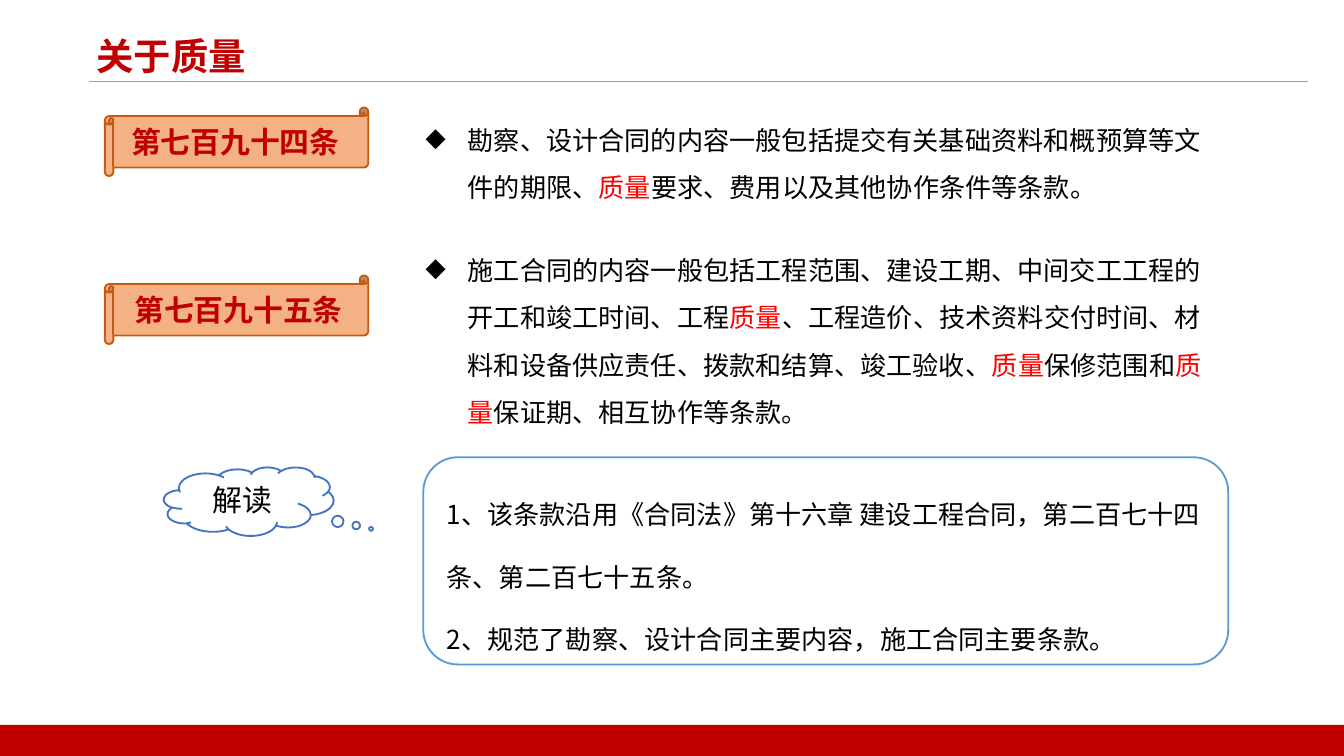
from lxml.etree import SubElement
from pptx import Presentation
from pptx.dml.color import RGBColor
from pptx.enum.shapes import MSO_CONNECTOR, MSO_SHAPE
from pptx.enum.text import MSO_ANCHOR, MSO_AUTO_SIZE, PP_ALIGN
from pptx.oxml.ns import qn
from pptx.util import Pt

FONT = "Noto Sans CJK SC"
WHITE = RGBColor(0xFF, 0xFF, 0xFF)
BLACK = RGBColor(0, 0, 0)
GRAY = RGBColor(0xA0, 0xA0, 0xA0)
CRIMSON = RGBColor(0xC0, 0, 0)
RED = RGBColor(0xFF, 0, 0)
PEACH = RGBColor(0xF4, 0xB1, 0x83)
RUST = RGBColor(0xC5, 0x5A, 0x11)
BLUE = RGBColor(0x44, 0x72, 0xC4)
LIGHT_BLUE = RGBColor(0x5B, 0x9B, 0xD5)

TITLE = "关于质量"
KEYWORD = "质量"
# label, label top, clause text, clause top, clause height
ARTICLES = [
    ("第七百九十四条 ", 57.6,
     "勘察、设计合同的内容一般包括提交有关基础资料和概预算等文件的期限、质量要求、费用以及其他协作条件等条款。",
     54.7, 54),
    ("第七百九十五条", 147.6,
     "施工合同的内容一般包括工程范围、建设工期、中间交工工程的开工和竣工时间、工程质量、工程造价、技术资料交付时间、"
     "材料和设备供应责任、拨款和结算、竣工验收、质量保修范围和质量保证期、相互协作等条款。",
     124.6, 105.1),
]
NOTE_LABEL = "解读"
NOTES = [
    "1、该条款沿用《合同法》第十六章 建设工程合同，第二百七十四条、第二百七十五条。",
    "2、规范了勘察、设计合同主要内容，施工合同主要条款。",
]

HEADING = {"size": Pt(20), "bold": True}
LABEL = {"size": Pt(16), "bold": True}
CLOUD = {"size": Pt(16)}
BODY = {"size": Pt(14)}


def add_run(paragraph, text, style, color):
    run = paragraph.add_run()
    run.text = text
    for name, value in style.items():
        setattr(run.font, name, value)
    run.font.name = FONT
    run.font.color.rgb = color
    east_asian = SubElement(run.font._element, qn("a:ea"))
    east_asian.set("typeface", FONT)


def add_bullet(paragraph, character, indent):
    properties = paragraph._p.get_or_add_pPr()
    properties.set("marL", str(indent))
    properties.set("indent", str(-indent))
    SubElement(properties, qn("a:buChar")).set("char", character)


def add_box(slide, kind, box, fill=None, line=None):
    shape = slide.shapes.add_shape(kind, *map(Pt, box))
    shape.shadow.inherit = False
    if fill is None:
        shape.fill.background()
    else:
        shape.fill.solid()
        shape.fill.fore_color.rgb = fill
    if line is None:
        shape.line.fill.background()
    else:
        shape.line.color.rgb = line
        shape.line.width = Pt(1)
    shape.text_frame.word_wrap = True
    shape.text_frame.vertical_anchor = MSO_ANCHOR.MIDDLE
    return shape


def add_text_box(slide, box):
    frame = slide.shapes.add_textbox(*map(Pt, box)).text_frame
    frame.word_wrap = True
    return frame


def add_centered_text(shape, text, style, color):
    paragraph = shape.text_frame.paragraphs[0]
    paragraph.alignment = PP_ALIGN.CENTER
    add_run(paragraph, text, style, color)


def add_clause(slide, text, top, height):
    """Bulleted paragraph with every keyword in red."""
    frame = add_text_box(slide, (221, top, 443.5, height))
    frame.auto_size = MSO_AUTO_SIZE.SHAPE_TO_FIT_TEXT
    paragraph = frame.paragraphs[0]
    add_bullet(paragraph, "◆", Pt(22.5))
    paragraph.line_spacing = 1.5
    for index, part in enumerate(text.split(KEYWORD)):
        if index:
            add_run(paragraph, KEYWORD, BODY, RED)
        add_run(paragraph, part, BODY, BLACK)


def add_header_and_footer(slide):
    rule = slide.shapes.add_connector(
        MSO_CONNECTOR.STRAIGHT, Pt(47.5), Pt(43.7), Pt(700.6), Pt(43.7))
    rule.line.color.rgb = GRAY
    rule.line.width = Pt(0.5)
    SubElement(rule._element.spPr, qn("a:effectLst"))
    title = add_text_box(slide, (44.6, 14.4, 234, 36.7))
    add_run(title.paragraphs[0], TITLE, HEADING, CRIMSON)
    add_box(slide, MSO_SHAPE.RECTANGLE, (0, 388.4, 720, 16.6), CRIMSON)


def add_notes(slide):
    cloud = add_box(slide, MSO_SHAPE.CLOUD_CALLOUT, (87.8, 250.3, 91, 36.7), WHITE, BLUE)
    cloud.adjustments[0], cloud.adjustments[1] = 0.72, 0.4
    add_centered_text(cloud, NOTE_LABEL, CLOUD, BLACK)

    panel = add_box(slide, MSO_SHAPE.ROUNDED_RECTANGLE, (226.8, 245, 431.2, 111), line=LIGHT_BLUE)
    frame = panel.text_frame
    for index, note in enumerate(NOTES):
        paragraph = frame.add_paragraph() if index else frame.paragraphs[0]
        paragraph.alignment = PP_ALIGN.LEFT
        paragraph.line_spacing = 2.0
        add_run(paragraph, note, BODY, BLACK)


def main():
    presentation = Presentation()
    presentation.slide_width, presentation.slide_height = Pt(720), Pt(405)
    slide = presentation.slides.add_slide(presentation.slide_layouts[6])
    slide.background.fill.solid()
    slide.background.fill.fore_color.rgb = WHITE

    add_header_and_footer(slide)
    for label, label_top, clause, clause_top, clause_height in ARTICLES:
        scroll = add_box(slide, MSO_SHAPE.HORIZONTAL_SCROLL, (56.2, label_top, 141.1, 36.7), PEACH, RUST)
        add_centered_text(scroll, label, LABEL, CRIMSON)
        add_clause(slide, clause, clause_top, clause_height)
    add_notes(slide)
    presentation.save("out.pptx")


if __name__ == "__main__":
    main()
